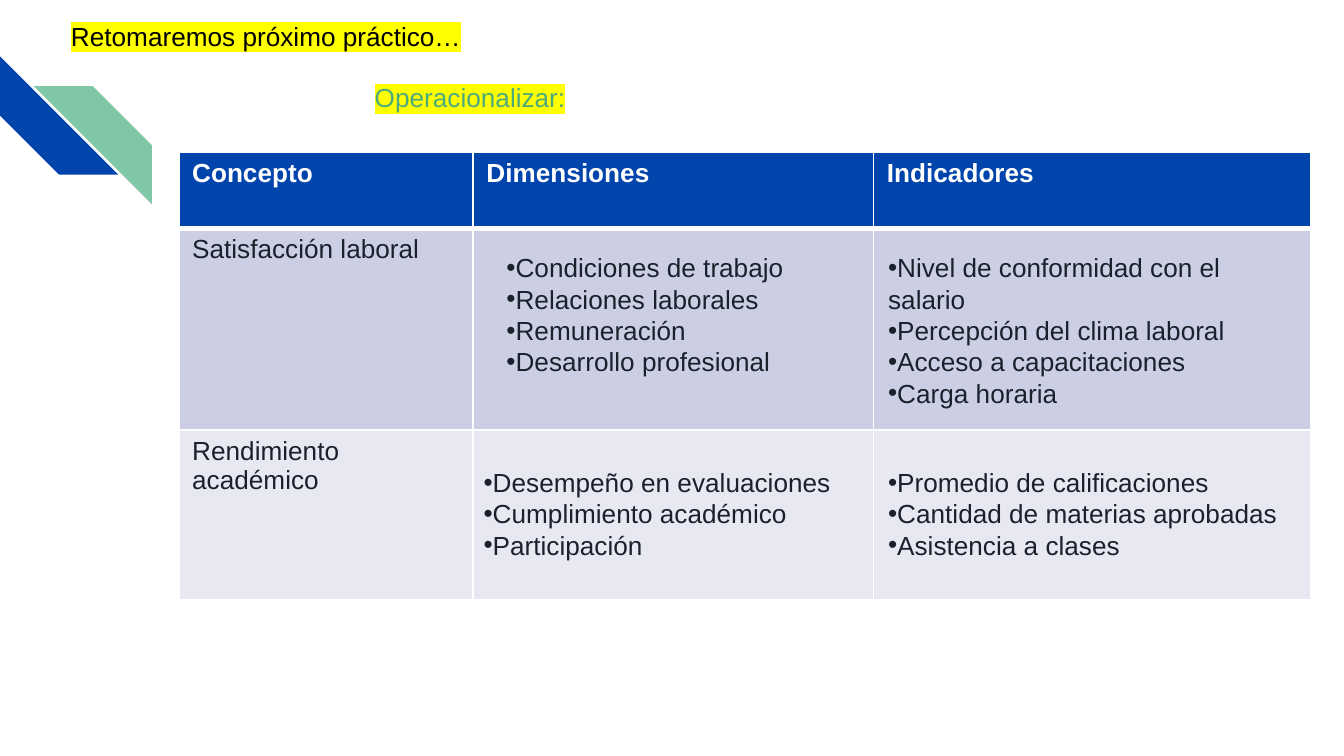
from lxml.etree import SubElement
from pptx import Presentation
from pptx.dml.color import RGBColor
from pptx.enum.shapes import MSO_SHAPE
from pptx.enum.text import MSO_ANCHOR
from pptx.oxml import parse_xml
from pptx.oxml.ns import nsdecls, qn
from pptx.util import Inches, Pt

BLUE = RGBColor(0x01, 0x45, 0xAC)
MINT = RGBColor(0x82, 0xC7, 0xA5)
GREEN = RGBColor(0x4C, 0xAA, 0x7C)
INK = RGBColor(0x1B, 0x21, 0x2C)
BLACK = RGBColor(0, 0, 0)
WHITE = RGBColor(0xFF, 0xFF, 0xFF)
YELLOW = RGBColor(0xFF, 0xFF, 0x00)
LILAC = RGBColor(0xCC, 0xCF, 0xE3)
PALE = RGBColor(0xE7, 0xE8, 0xF2)

COLS = [2.19, 2.98, 3.25]
ROWS = [0.57, 1.5, 1.26]
CELLS = [
    (["Concepto", "Dimensiones", "Indicadores"], BLUE),
    (["Satisfacción laboral", "", ""], LILAC),
    (["Rendimiento académico", "", ""], PALE),
]
LISTS = [
    ((2.34, 0.69, 3.05, 1.04),
     ["Condiciones de trabajo", "Relaciones laborales",
      "Remuneración", "Desarrollo profesional"]),
    ((5.18, 0.69, 3.17, 1.27),
     ["Nivel de conformidad con el salario", "Percepción del clima laboral",
      "Acceso a capacitaciones", "Carga horaria"]),
    ((2.17, 2.28, 3.05, 0.82),
     ["Desempeño en evaluaciones", "Cumplimiento académico", "Participación"]),
    ((5.18, 2.28, 3.33, 0.82),
     ["Promedio de calificaciones", "Cantidad de materias aprobadas",
      "Asistencia a clases"]),
]


def write(para, text, color=INK, bold=False, mark=None, bullet=False):
    if bullet:
        props = para._p.get_or_add_pPr()
        props.set("marL", "0")
        props.set("indent", "0")
        SubElement(props, qn("a:buFont")).set("typeface", "Arial")
        SubElement(props, qn("a:buChar")).set("char", "•")
        para.line_spacing = Pt(16.8)
    run = para.add_run()
    run.text = text
    font = run.font
    font.name, font.size, font.bold = "Arial", Pt(14), bold
    font.color.rgb = color
    if mark is not None:
        light = parse_xml(f'<a:highlight {nsdecls("a")}>'
                          f'<a:srgbClr val="{mark}"/></a:highlight>')
        run._r.rPr.find(qn("a:solidFill")).addnext(light)


def add_box(slide, left, top, width, height, lines, **style):
    box = slide.shapes.add_textbox(
        Inches(left), Inches(top), Inches(width), Inches(height))
    frame = box.text_frame
    frame.word_wrap = True
    for i, line in enumerate(lines):
        para = frame.add_paragraph() if i else frame.paragraphs[0]
        write(para, line, **style)
    return frame


def add_border(cell, sides):
    props = cell._tc.get_or_add_tcPr()
    for i, (side, width) in enumerate(sides.items()):
        line = parse_xml(
            f'<a:ln{side} {nsdecls("a")} w="{Pt(width)}"><a:solidFill>'
            f'<a:srgbClr val="{WHITE}"/></a:solidFill></a:ln{side}>')
        props.insert(i, line)


def add_stripes(slide, left, top, size):
    for dx, dy, turn, color in [(0, 0, 270, BLUE), (0.25, 0.22, 90, MINT)]:
        stripe = slide.shapes.add_shape(
            MSO_SHAPE.DIAGONAL_STRIPE, Inches(left + dx), Inches(top + dy),
            Inches(size), Inches(size))
        stripe.rotation = turn
        stripe.shadow.inherit = False
        stripe.fill.solid()
        stripe.fill.fore_color.rgb = color
        stripe.line.fill.background()


def add_grid(slide, left, top):
    table = slide.shapes.add_table(
        len(ROWS), len(COLS), Inches(left), Inches(top),
        Inches(sum(COLS)), Inches(sum(ROWS))).table
    for col, width in zip(table.columns, COLS):
        col.width = Inches(width)
    for r, (texts, fill) in enumerate(CELLS):
        table.rows[r].height = Inches(ROWS[r])
        for c, text in enumerate(texts):
            cell = table.cell(r, c)
            cell.fill.solid()
            cell.fill.fore_color.rgb = fill
            add_border(cell, {"L": 1, "R": 1, "T": 3 if r == 1 else 1,
                              "B": 3 if r == 0 else 1})
            if text:
                write(cell.text_frame.paragraphs[0], text,
                      color=INK if r else WHITE, bold=r == 0)


def add_lists(slide, left, top):
    for (dx, dy, width, height), lines in LISTS:
        frame = add_box(slide, left + dx, top + dy, width, height,
                        lines, bullet=True)
        frame.vertical_anchor = MSO_ANCHOR.MIDDLE


def main():
    deck = Presentation()
    deck.slide_width, deck.slide_height = Inches(10), Inches(10 * 9 / 16)
    slide = deck.slides.add_slide(deck.slide_layouts[6])
    add_stripes(slide, 0, 0.42, 0.88)
    add_box(slide, 2.69, 0.56, 5, 0.34, ["Operacionalizar:"],
            color=GREEN, mark=YELLOW)
    add_grid(slide, 1.33, 1.13)
    add_lists(slide, 1.33, 1.13)
    add_box(slide, 0.43, 0.1, 4.16, 0.34, ["Retomaremos próximo práctico…"],
            color=BLACK, mark=YELLOW)
    deck.save("out.pptx")


if __name__ == "__main__":
    main()
